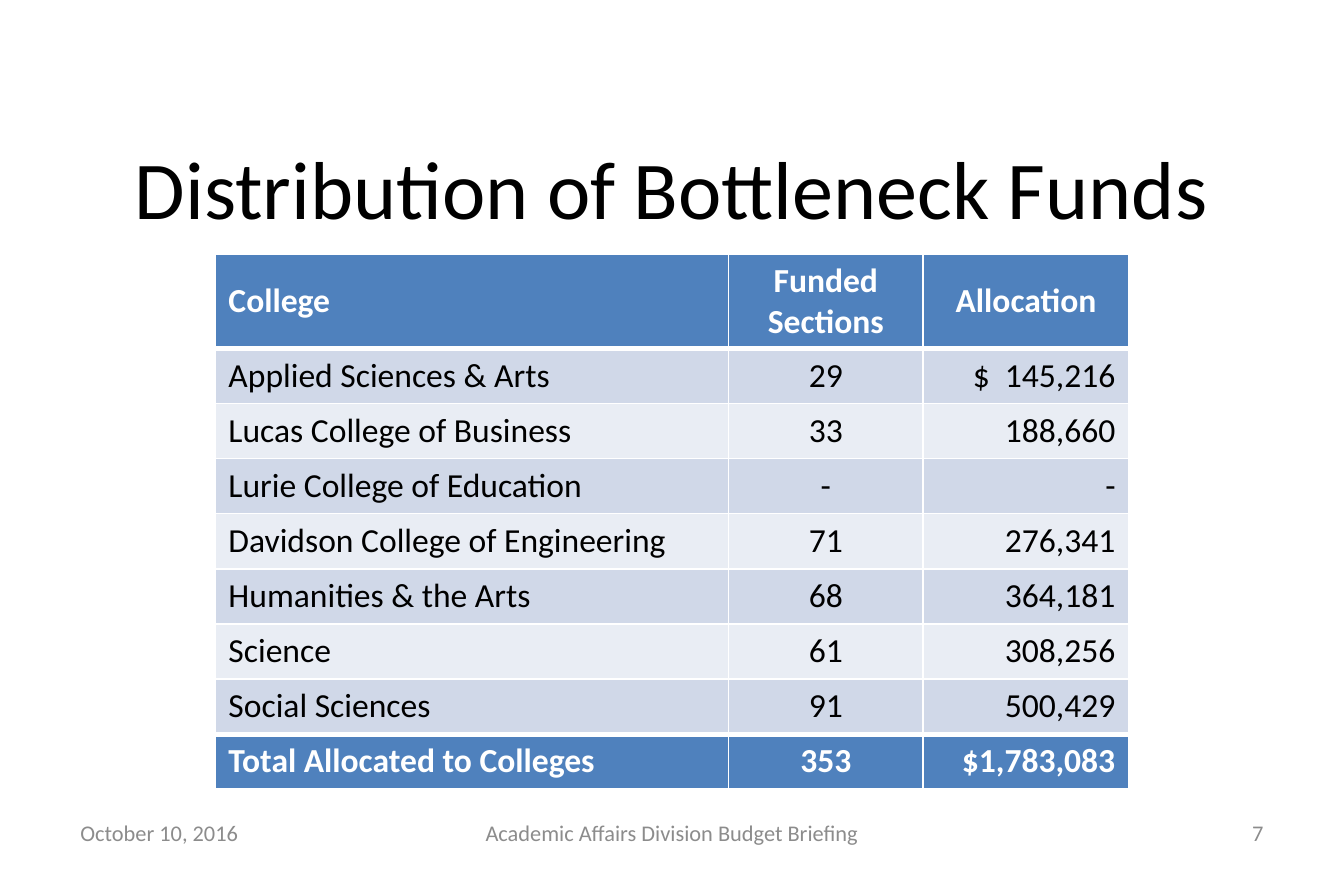
from pptx import Presentation
from pptx.util import Inches, Pt
from pptx.dml.color import RGBColor
from pptx.enum.text import PP_ALIGN as Align, MSO_ANCHOR as Anchor
from pptx.oxml import parse_xml
from pptx.oxml.ns import nsdecls

WIDE, HIGH = 10, 6.5
BLUE, BANDS = "4F81BD", ("E9EDF4", "D0D8E8")
WHITE, BLACK, GRAY = "FFFFFF", "000000", "8C8C8C"
SIDES = (Align.LEFT, Align.CENTER, Align.RIGHT)

TITLE = "Distribution of Bottleneck Funds"
ROWS = [
    ("College", "Funded Sections", "Allocation"),
    ("Applied Sciences & Arts", "29", "$  145,216"),
    ("Lucas College of Business", "33", "188,660"),
    ("Lurie College of Education", "-", "-"),
    ("Davidson College of Engineering", "71", "276,341"),
    ("Humanities & the Arts", "68", "364,181"),
    ("Science", "61", "308,256"),
    ("Social Sciences", "91", "500,429"),
    ("Total Allocated to Colleges", "353", "$1,783,083"),
]
COLS = (3.82, 1.45, 1.53)
ROW = 0.41
FOOT = ["October 10, 2016", "Academic Affairs Division Budget Briefing", "7"]
FOOT_W = (2.33, 3.17, 2.33)


def color(code):
    return RGBColor.from_string(code)


def write(frame, text, size=18, ink=BLACK, bold=False, align=Align.LEFT):
    frame.word_wrap = True
    para = frame.paragraphs[0]
    para.alignment = align
    run = para.add_run()
    run.text = text
    font = run.font
    font.name, font.size, font.bold = "Calibri", Pt(size), bold
    font.color.rgb = color(ink)


def label(slide, text, box, **look):
    frame = slide.shapes.add_textbox(*map(Inches, box)).text_frame
    frame.vertical_anchor = Anchor.MIDDLE
    write(frame, text, **look)


def border(cell, top, bottom):
    props = cell._tc.get_or_add_tcPr()
    edges = (("L", 1), ("R", 1), ("T", top), ("B", bottom))
    for spot, (side, width) in enumerate(edges):
        props.insert(spot, parse_xml(
            f'<a:ln{side} {nsdecls("a")} w="{Pt(width)}"><a:solidFill>'
            f'<a:srgbClr val="{WHITE}"/></a:solidFill></a:ln{side}>'))


def main():
    deck = Presentation()
    deck.slide_width, deck.slide_height = Inches(WIDE), Inches(HIGH)
    slide = deck.slides.add_slide(deck.slide_layouts[6])

    # Title
    edge = 0.05 * WIDE
    span = WIDE - 2 * edge
    label(slide, TITLE, (edge, 0.88, span, 1.01), size=44, align=Align.CENTER)

    # Table of funds, with head and total rows in blue
    wide = sum(COLS)
    last = len(ROWS) - 1
    box = ((WIDE - wide) / 2, 1.89, wide, ROW * len(ROWS))
    table = slide.shapes.add_table(len(ROWS), len(COLS), *map(Inches, box)).table
    table.last_row = True
    for col, width in zip(table.columns, COLS):
        col.width = Inches(width)
    for r, row in enumerate(ROWS):
        table.rows[r].height = Inches(ROW)
        key = r in (0, last)
        for c, text in enumerate(row):
            cell = table.cell(r, c)
            cell.fill.solid()
            cell.fill.fore_color.rgb = color(BLUE if key else BANDS[r % 2])
            if r == 0:
                cell.vertical_anchor = Anchor.MIDDLE
            align = Align.CENTER if r == 0 and c else SIDES[c]
            write(cell.text_frame, text, ink=WHITE if key else BLACK,
                  bold=key, align=align)
            border(cell, top=3 if r in (1, last) else 1,
                   bottom=3 if r in (0, last - 1) else 1)

    # Footer: date, briefing name, page number
    gap = (span - sum(FOOT_W)) / 2
    left = edge
    for text, width, align in zip(FOOT, FOOT_W, SIDES):
        label(slide, text, (left, 6.02, width, 0.35),
              size=12, ink=GRAY, align=align)
        left += width + gap

    deck.save("out.pptx")


if __name__ == "__main__":
    main()
